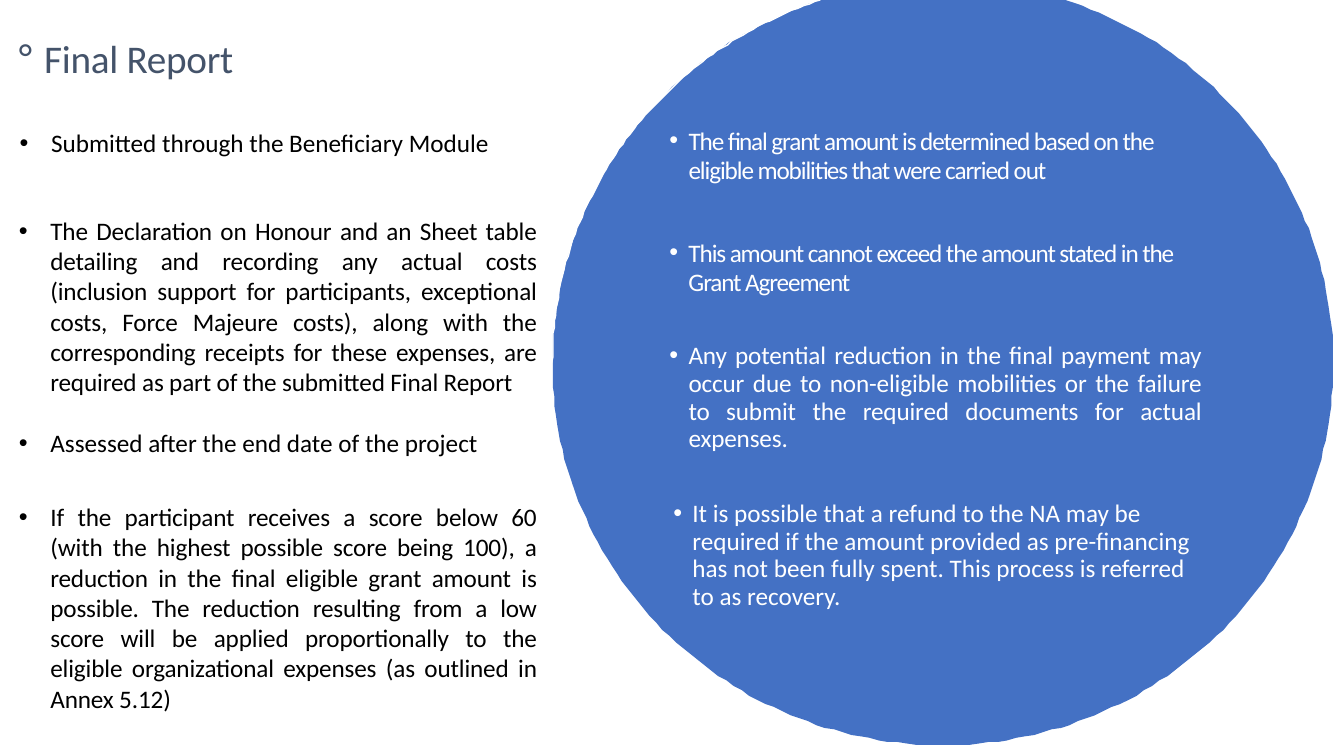
from math import asin, cos, pi, sin

from lxml.etree import SubElement
from pptx import Presentation
from pptx.dml.color import RGBColor
from pptx.enum.text import MSO_ANCHOR, MSO_AUTO_SIZE, PP_ALIGN
from pptx.oxml.ns import qn
from pptx.util import Pt

COLOURS = {"heading": "44536A", "body": "000000", "disc": "4471C4", "light": "FFFFFF"}
FRAME = {
    "word_wrap": True,
    "auto_size": MSO_AUTO_SIZE.NONE,
    "vertical_anchor": MSO_ANCHOR.TOP,
    "margin_left": 0,
    "margin_right": 0,
    "margin_bottom": 0,
}
DISC_CENTRE = (673.5, 259.3)
DISC_RADII = (279, 273)


class ReportSlide:
    def __init__(self, deck):
        self.slide = deck.slides.add_slide(deck.slide_layouts[5])
        self.font_name = "Calibri"

    def colour(self, name):
        return RGBColor.from_string(COLOURS[name])

    def apply(self, target, values):
        for key, value in values.items():
            setattr(target, key, value)

    def place(self, shape, box):
        for side, length in zip(("left", "top", "width", "height"), box):
            setattr(shape, side, Pt(length))

    def bullet(self, paragraph, symbol, margin, hanging):
        properties = paragraph._p.get_or_add_pPr()
        properties.set("marL", str(Pt(margin)))
        properties.set("indent", str(-Pt(hanging)))
        SubElement(properties, qn("a:buFont")).set("typeface", self.font_name if symbol == "°" else "Arial")
        SubElement(properties, qn("a:buChar")).set("char", symbol)

    def point(self, shape, wording, ink, size=18, symbol="•", indent=(23.5, 22.5), inset=1,
              tracking=0, align=PP_ALIGN.LEFT, leading=1.0, before=1):
        frame = shape.text_frame
        self.apply(frame, {**FRAME, "margin_top": Pt(inset)})
        paragraph = frame.add_paragraph() if frame.text else frame.paragraphs[0]
        self.apply(paragraph, {"alignment": align, "line_spacing": leading, "space_before": Pt(before)})
        self.bullet(paragraph, symbol, *indent)
        run = paragraph.add_run()
        run.text = wording
        self.apply(run.font, {"name": self.font_name, "size": Pt(size)})
        run.font.color.rgb = self.colour(ink)
        if tracking:
            run._r.get_or_add_rPr().set("spc", str(round(tracking * 100)))

    def title(self, wording, box):
        heading = self.slide.shapes.title
        self.place(heading, box)
        self.point(heading, wording, "heading", size=28, symbol="°", indent=(18.5, 18), tracking=-0.2)

    def text(self, wording, box, ink, **style):
        block = self.slide.shapes.add_textbox(*(Pt(length) for length in box))
        self.point(block, wording, ink, **style)
        return block

    def arc(self, start, end, steps, fill=None, line=None):
        (cx, cy), (rx, ry) = DISC_CENTRE, DISC_RADII
        angles = [start + (end - start) * step / steps for step in range(steps + 1)]
        points = [(cx + rx * cos(angle), cy - ry * sin(angle)) for angle in angles]
        builder = self.slide.shapes.build_freeform(*points[0], scale=Pt(1))
        builder.add_line_segments(points[1:], close=fill is not None)
        curve = builder.convert_to_shape()
        curve.shadow.inherit = False
        if fill:
            curve.fill.solid()
            curve.fill.fore_color.rgb = self.colour(fill)
        else:
            curve.fill.background()
        if line:
            curve.line.color.rgb = self.colour(line)
            curve.line.width = Pt(1)
        else:
            curve.line.fill.background()


def main():
    deck = Presentation()
    deck.slide_width, deck.slide_height = Pt(960), Pt(540)
    report = ReportSlide(deck)

    report.title("Final Report", (13, 23.8, 180, 35.3))
    justified = {"align": PP_ALIGN.JUSTIFY, "tracking": -0.1}
    report.text("Submitted through the Beneficiary Module", (13, 90, 371, 23), "body")
    submission = report.text(
        "The Declaration on Honour and an Sheet table detailing and recording any actual costs "
        "(inclusion support for participants, exceptional costs, Force Majeure costs), along with "
        "the corresponding receipts for these expenses, are required as part of the submitted "
        "Final Report", (12.5, 152.8, 371, 175.7), "body", **justified)
    report.point(submission, "Assessed after the end date of the project", "body", before=22)
    report.text(
        "If the participant receives a score below 60 (with the highest possible score being 100), "
        "a reduction in the final eligible grant amount is possible. The reduction resulting from "
        "a low score will be applied proportionally to the eligible organizational expenses "
        "(as outlined in Annex 5.12)", (12.5, 357.2, 371, 176.4), "body", **justified)

    clip = asin(DISC_CENTRE[1] / DISC_RADII[1])
    report.arc(pi - clip, 2 * pi + clip, 240, fill="disc")
    report.arc(pi, pi - clip, 80, line="light")

    hanging = {"indent": (14.4, 13.7)}
    condensed = {**hanging, "tracking": -0.8, "leading": Pt(20.7)}
    report.text("The final grant amount is determined based on the eligible mobilities that were carried out",
                (477.4, 89.3, 368.6, 43.2), "light", **condensed)
    report.text("This amount cannot exceed the amount stated in the Grant Agreement",
                (477.4, 169.2, 383.8, 43.2), "light", **condensed)
    report.text(
        "Any potential reduction in the final payment may occur due to non-eligible mobilities or "
        "the failure to submit the required documents for actual expenses.",
        (477.4, 241.2, 380.9, 107.3), "light", **hanging, **justified,
        inset=3, leading=Pt(19.8), before=3.1)
    report.text(
        "It is possible that a refund to the NA may be required if the amount provided as "
        "pre-financing has not been fully spent. This process is referred to as recovery.",
        (480.2, 354.2, 380.9, 129.6), "light", **hanging, inset=3, leading=0.92, before=2.8)

    deck.save("out.pptx")


if __name__ == "__main__":
    main()
